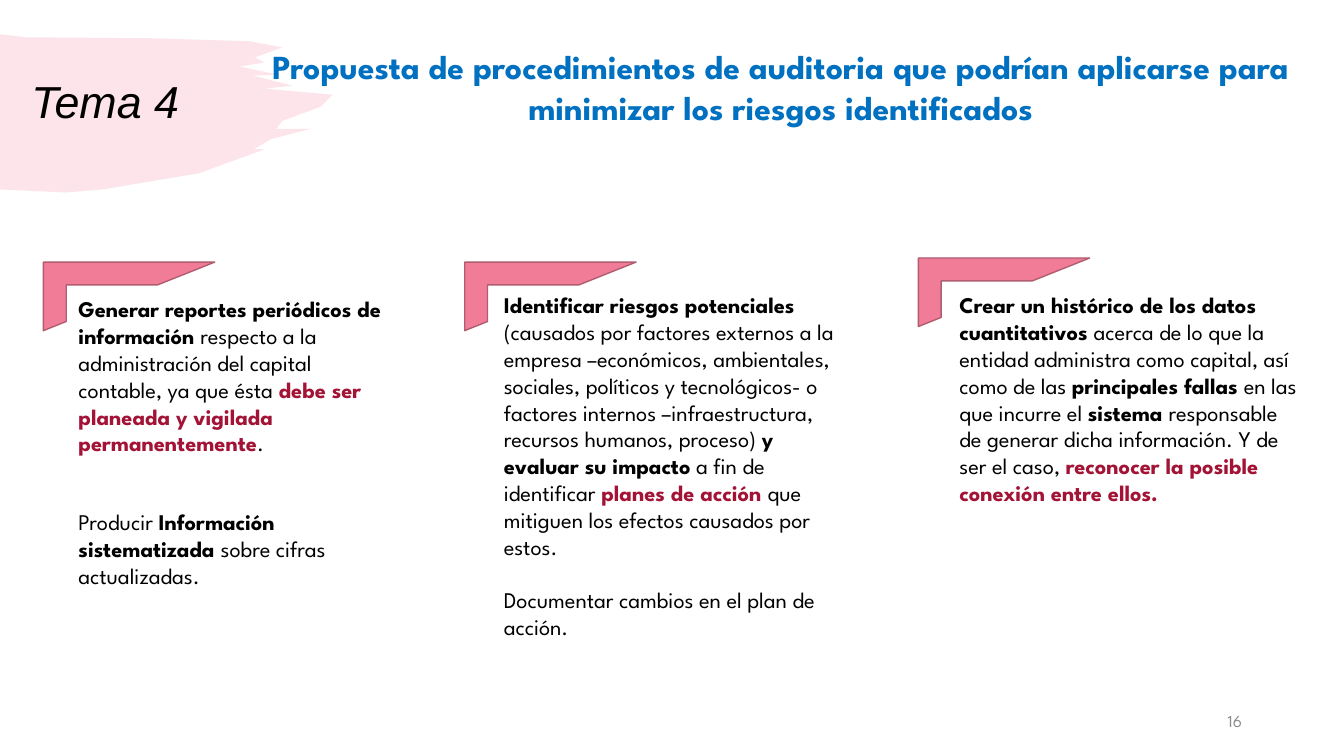
"""Build the slide on audit procedures for the identified risks."""
from dataclasses import dataclass

from lxml import etree
from pptx import Presentation, util as u
from pptx.dml.color import RGBColor
from pptx.enum import shapes, text
from pptx.oxml import ns

WIDTH, HEIGHT = u.Inches(13.333), u.Inches(7.5)
FONT = "League Spartan"
COLOURS = {
    "plain": "000000",
    "strong": "000000",
    "accent": "A31336",
    "heading": "0070C0",
    "number": "8C8C8C",
    "pink": "F07C98",
    "edge": "B25C70",
}


@dataclass(frozen=True)
class Area:
    """A rectangle in percentages of the slide's width and height."""
    left: float
    top: float
    width: float
    height: float

    def lengths(self) -> tuple[int, int, int, int]:
        """Return left, top, width and height in slide units."""
        return (int(WIDTH * self.left / 100), int(HEIGHT * self.top / 100),
                int(WIDTH * self.width / 100), int(HEIGHT * self.height / 100))


@dataclass(frozen=True)
class Span:
    """A stretch of text in one tone."""
    words: str
    tone: str = "plain"


@dataclass(frozen=True)
class Block:
    """A text box with its paragraphs and their common format."""
    area: Area
    paragraphs: list[list[Span]]
    size: int = 16
    align: text.PP_ALIGN = text.PP_ALIGN.LEFT
    anchor: text.MSO_ANCHOR = text.MSO_ANCHOR.TOP


TITLE_AREA = Area(1.58, 7.6, 18.98, 12.27)
FRAMES = [Area(left, top, 12.75, 9.07)
          for left, top in ((3.23, 34.67), (34.58, 34.67), (68.33, 34.13))]

BLOCKS = [
    Block(Area(70.65, 92.67, 22.5, 5.33), [[Span("16", "number")]], 12,
          text.PP_ALIGN.RIGHT, text.MSO_ANCHOR.MIDDLE),
    Block(Area(18.6, 5.47, 78.98, 12.13), [[
        Span("Propuesta de procedimientos de auditoria que podrían aplicarse "
             "para minimizar los riesgos identificados", "heading"),
    ]], 24, text.PP_ALIGN.CENTER),
    Block(Area(5.1, 38.4, 24.83, 22.93), [[
        Span("Generar reportes periódicos de información ", "strong"),
        Span("respecto a la administración del capital contable, ya que ésta "),
        Span("debe ser planeada y vigilada permanentemente", "accent"),
        Span("."),
    ]]),
    Block(Area(36.75, 37.87, 27.53, 51.6), [[
        Span("Identificar riesgos potenciales ", "strong"),
        Span("(causados por factores externos a la empresa –económicos, "
             "ambientales, sociales, políticos y tecnológicos- o factores "
             "internos –infraestructura, recursos humanos, proceso) "),
        Span("y evaluar su impacto", "strong"),
        Span(" a fin de identificar "),
        Span("planes de acción ", "accent"),
        Span("que mitiguen los efectos causados por estos."),
    ], [Span("Documentar cambios en el plan de acción.")]]),
    Block(Area(70.65, 37.87, 26.93, 33.6), [[
        Span("Crear un histórico de los datos cuantitativos ", "strong"),
        Span("acerca de lo que la entidad administra como capital, así como de las "),
        Span("principales fallas ", "strong"),
        Span("en las que incurre el "),
        Span("sistema ", "strong"),
        Span("responsable de generar dicha información. Y de ser el caso, "),
        Span("reconocer la posible conexión entre ellos.", "accent"),
    ]]),
    Block(Area(5.1, 66.53, 23.55, 12.13), [[
        Span("Producir "),
        Span("Información sistematizada ", "strong"),
        Span("sobre cifras actualizadas."),
    ]]),
]

BRUSH_OUTLINE = [
    (0, 0.34), (0.25, 0.37), (1.51, 0.38), (2.48, 0.41), (2.8, 0.47),
    (2.53, 0.57), (2.62, 0.62), (2.38, 0.66), (2.75, 0.74), (2.51, 0.75),
    (2.9, 0.85), (2.63, 0.88), (3.3, 0.94), (3.18, 1.06), (2.8, 1.2),
    (2.74, 1.28), (3.08, 1.28), (2.69, 1.38), (2.52, 1.48), (2.63, 1.48),
    (1.97, 1.72), (1.02, 1.88), (0.65, 1.91), (0, 1.88),
]


def colour(name: str) -> RGBColor:
    """Look up a named colour."""
    return RGBColor.from_string(COLOURS[name])


def draw_brush(page) -> None:
    """Draw the translucent brush stroke behind the title."""
    start, *rest = [(u.Inches(x), u.Inches(y)) for x, y in BRUSH_OUTLINE]
    builder = page.shapes.build_freeform(*start)
    builder.add_line_segments(rest, close=True)
    brush = builder.convert_to_shape()
    brush.shadow.inherit = False
    brush.fill.solid()
    brush.fill.fore_color.rgb = colour("pink")
    brush.line.fill.background()
    tint = brush.element.spPr.find(ns.qn("a:solidFill"))[0]
    etree.SubElement(tint, ns.qn("a:alpha"), val="20000")
    page.shapes.title.element.addprevious(brush.element)


def write_title(page) -> None:
    """Place and format the title."""
    title = page.shapes.title
    title.left, title.top, title.width, title.height = TITLE_AREA.lengths()
    frame = title.text_frame
    frame.text = "Tema 4"
    frame.auto_size = text.MSO_AUTO_SIZE.NONE
    frame.vertical_anchor = text.MSO_ANCHOR.MIDDLE
    para = frame.paragraphs[0]
    para.alignment, para.line_spacing = text.PP_ALIGN.LEFT, 0.9
    para.font.name, para.font.size, para.font.italic = "Arial", u.Pt(32), True
    para.font.color.rgb = colour("plain")


def draw_frame(page, area: Area) -> None:
    """Draw a corner frame."""
    corner = page.shapes.add_shape(shapes.MSO_SHAPE.HALF_FRAME, *area.lengths())
    corner.shadow.inherit = False
    corner.fill.solid()
    corner.fill.fore_color.rgb = colour("pink")
    corner.line.color.rgb = colour("edge")
    corner.line.width = u.Pt(1)


def write_block(page, block: Block) -> None:
    """Write a text box with toned spans."""
    frame = page.shapes.add_textbox(*block.area.lengths()).text_frame
    frame.word_wrap = True
    frame.vertical_anchor = block.anchor
    for index, spans in enumerate(block.paragraphs):
        para = frame.add_paragraph() if index else frame.paragraphs[0]
        para.alignment = block.align
        para.font.name, para.font.size = FONT, u.Pt(block.size)
        if index:
            para.space_before = u.Pt(19)
        for span in spans:
            run = para.add_run()
            run.text = span.words
            run.font.bold = span.tone not in ("plain", "number")
            run.font.color.rgb = colour(span.tone)


def main() -> None:
    """Build and save the deck."""
    deck = Presentation()
    deck.slide_width, deck.slide_height = WIDTH, HEIGHT
    page = deck.slides.add_slide(deck.slide_layouts.get_by_name("Title Only"))
    write_title(page)
    draw_brush(page)
    for area in FRAMES:
        draw_frame(page, area)
    for block in BLOCKS:
        write_block(page, block)
    deck.save("out.pptx")


if __name__ == "__main__":
    main()
